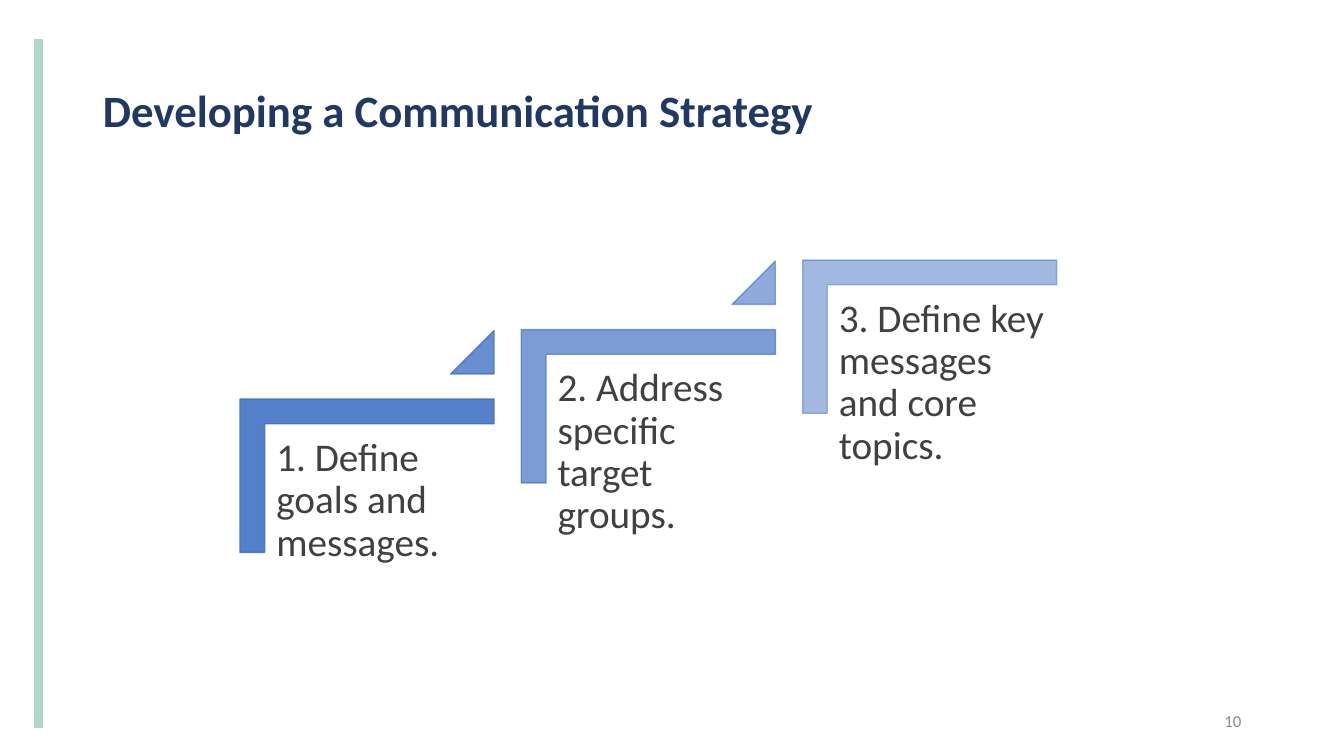
from lxml import etree
from pptx import Presentation
from pptx import util as u
from pptx.dml.color import RGBColor
from pptx.enum import shapes, text
from pptx.oxml.ns import qn

BLUE, NAVY, GREY, MINT = "4472C4", "203864", "404040", "AED7C7"
STEPS = [
    "1. Define goals and messages.",
    "2. Address specific target groups.",
    "3. Define key messages and core topics.",
]
STEP_X, STEP_Y = 2.79, -0.69


def write(shape, wording, size, color, bold=False, spacing=None, inset=None,
          align=text.PP_ALIGN.LEFT, anchor=text.MSO_ANCHOR.TOP):
    frame = shape.text_frame
    frame.word_wrap = True
    frame.vertical_anchor = anchor
    if inset is not None:
        frame.margin_left = frame.margin_right = u.Inches(inset)
        frame.margin_top = frame.margin_bottom = u.Inches(inset)
    frame.text = wording
    paragraph = frame.paragraphs[0]
    paragraph.alignment = align
    paragraph.line_spacing = spacing
    font = paragraph.runs[0].font
    font.name, font.size, font.bold = "Calibri", u.Pt(size), bold
    font.color.rgb = RGBColor.from_string(color)


def add_tinted(preset, left, top, width, height, adjustments, opacity):
    """Add a blue shape whose fill and outline share an opacity in percent."""
    shape = slide.shapes.add_shape(
        preset, u.Inches(left), u.Inches(top), u.Inches(width), u.Inches(height))
    shape.shadow.inherit = False
    for index, value in enumerate(adjustments):
        shape.adjustments[index] = value
    shape.line.width = u.Pt(1)
    for fill in (shape.fill, shape.line.fill):
        fill.solid()
        fill.fore_color.rgb = RGBColor.from_string(BLUE)
    for color in shape.element.spPr.iter(qn("a:srgbClr")):
        etree.SubElement(color, qn("a:alpha")).set("val", str(opacity * 1000))
    return shape


prs = Presentation()
prs.slide_width, prs.slide_height = u.Inches(13.33), u.Inches(7.5)
slide = prs.slides.add_slide(prs.slide_layouts[5])

side_rule = slide.shapes.add_connector(
    shapes.MSO_CONNECTOR.STRAIGHT,
    u.Inches(0.38), u.Inches(0.39), u.Inches(0.38), u.Inches(7.22))
side_rule.line.width = u.Pt(6)
side_rule.line.color.rgb = RGBColor.from_string(MINT)
etree.SubElement(side_rule.element.spPr, qn("a:effectLst"))

title = slide.shapes.title
title.left, title.top = u.Inches(0.92), u.Inches(0.4)
title.width, title.height = u.Inches(11.5), u.Inches(1.45)
write(title, "Developing a Communication Strategy", 32, NAVY, bold=True,
      spacing=0.9, anchor=text.MSO_ANCHOR.MIDDLE)

page_number = slide.shapes.add_textbox(
    u.Inches(11.71), u.Inches(6.95), u.Inches(0.7), u.Inches(0.4))
write(page_number, "10", 12, "8C8C8C", align=text.PP_ALIGN.RIGHT,
      anchor=text.MSO_ANCHOR.MIDDLE)

for number, wording in enumerate(STEPS):
    dx, dy = number * STEP_X, number * STEP_Y
    opacity = 90 - 20 * number
    bracket = add_tinted(shapes.MSO_SHAPE.CORNER, 2.88 + dx, 3.46 + dy,
                         1.52, 2.52, (0.161, 0.161), opacity)
    bracket.rotation = 90
    label = slide.shapes.add_textbox(
        u.Inches(2.62 + dx), u.Inches(4.22 + dy), u.Inches(2.28), u.Inches(2))
    write(label, wording, 28, GREY, spacing=0.9, inset=0.12)
    if number < len(STEPS) - 1:
        add_tinted(shapes.MSO_SHAPE.ISOSCELES_TRIANGLE, 4.47 + dx, 3.28 + dy,
                   0.43, 0.43, (1,), opacity - 10)

prs.save("out.pptx")
